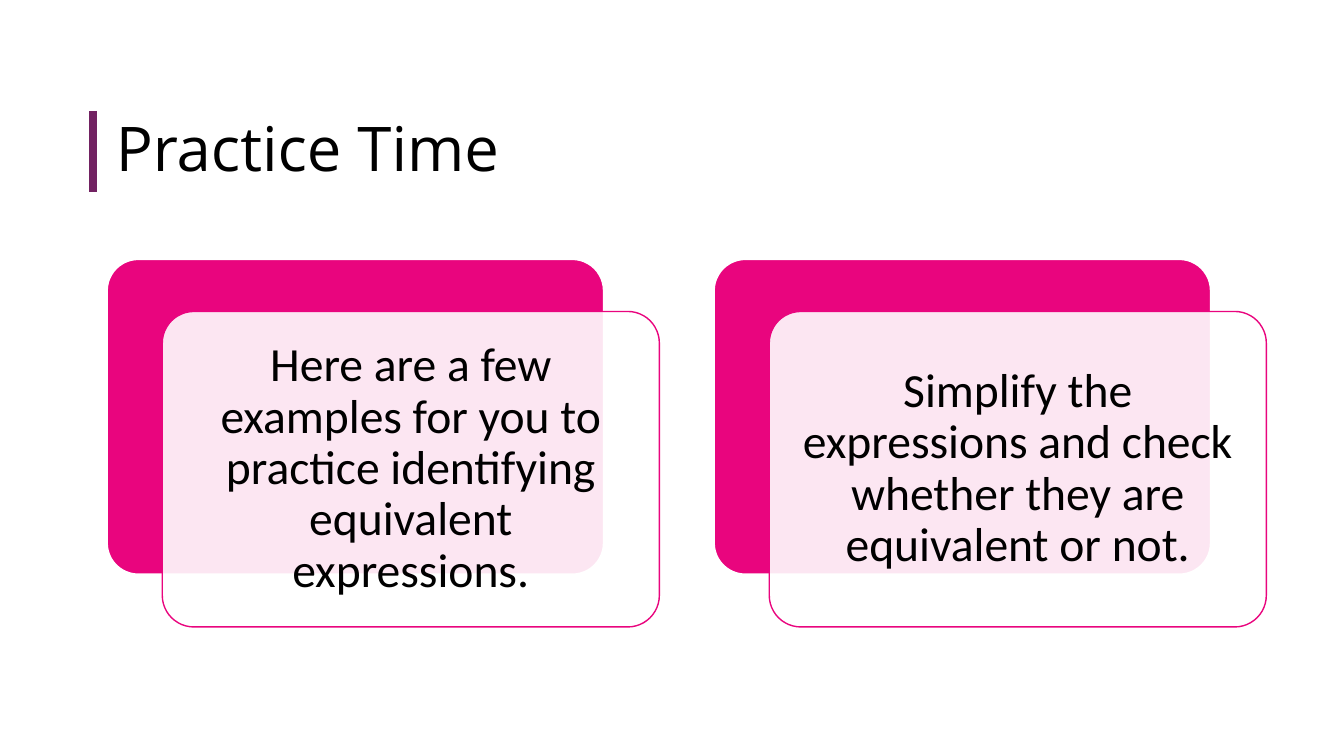
import pptx
import pptx.util
import pptx.dml.color
import pptx.enum.shapes
import pptx.enum.text
import pptx.oxml
import pptx.oxml.ns
from lxml import etree

TITLE = "Practice Time"
CARDS = [
    "Here are a few examples for you to practice identifying equivalent expressions.",
    "Simplify the expressions and check whether they are equivalent or not.",
]
THEME = {
    "pink": "E9057E", "plum": "722262", "white": "FFFFFF", "black": "000000",
    "head": ("Open Sans", 44), "body": ("Calibri", 34),
}
LEFT, TOP = 1.06, 2.57
WIDE, HIGH = 4.93, 3.13
STEP = 6.02
SHIFT_X, SHIFT_Y = 0.55, 0.52
PAD = 0.14

Inches = pptx.util.Inches
Pt = pptx.util.Pt
ALIGN = pptx.enum.text.PP_ALIGN


def tint(name):
    return pptx.dml.color.RGBColor.from_string(THEME[name])


def write(shape, text, style, align):
    frame = shape.text_frame
    frame.text = text
    frame.word_wrap = True
    frame.vertical_anchor = pptx.enum.text.MSO_ANCHOR.MIDDLE
    para = frame.paragraphs[0]
    para.alignment = align
    para.line_spacing = 0.9
    font = para.runs[0].font
    font.name, size = THEME[style]
    font.size = Pt(size)
    font.color.rgb = tint("black")
    return frame


def panel(slide, x, y, fill, edge, width):
    shape = slide.shapes.add_shape(
        pptx.enum.shapes.MSO_SHAPE.ROUNDED_RECTANGLE,
        Inches(x), Inches(y), Inches(WIDE), Inches(HIGH))
    shape.adjustments[0] = 0.1
    shape.shadow.inherit = False
    shape.fill.solid()
    shape.fill.fore_color.rgb = tint(fill)
    shape.line.color.rgb = tint(edge)
    shape.line.width = Pt(width)
    return shape


def card(slide, x, text):
    panel(slide, x, TOP, "pink", "white", 1.5)
    front = panel(slide, x + SHIFT_X, TOP + SHIFT_Y, "white", "pink", 1)
    qn = pptx.oxml.ns.qn
    color = front.fill._xPr.find(qn("a:solidFill")).find(qn("a:srgbClr"))
    etree.SubElement(color, qn("a:alpha")).set("val", "90000")
    frame = write(front, text, "body", ALIGN.CENTER)
    frame.margin_left = frame.margin_right = Inches(PAD)
    frame.margin_top = frame.margin_bottom = Inches(PAD)


def header(slide):
    bar = slide.shapes.add_connector(
        pptx.enum.shapes.MSO_CONNECTOR.STRAIGHT,
        Inches(0.92), Inches(1.1), Inches(0.92), Inches(1.9))
    bar.line.color.rgb = tint("plum")
    bar.line.width = Pt(6)
    etree.SubElement(bar._element.spPr, pptx.oxml.ns.qn("a:effectLst"))
    box = slide.shapes.add_textbox(
        Inches(1.05), Inches(1.1), Inches(11.5), Inches(0.8))
    write(box, TITLE, "head", ALIGN.LEFT)


def main():
    deck = pptx.Presentation()
    deck.slide_width = Inches(13.33)
    deck.slide_height = Inches(7.5)
    slide = deck.slides.add_slide(deck.slide_layouts[6])
    header(slide)
    for index, text in enumerate(CARDS):
        card(slide, LEFT + index * STEP, text)
    deck.save("out.pptx")


if __name__ == "__main__":
    main()
